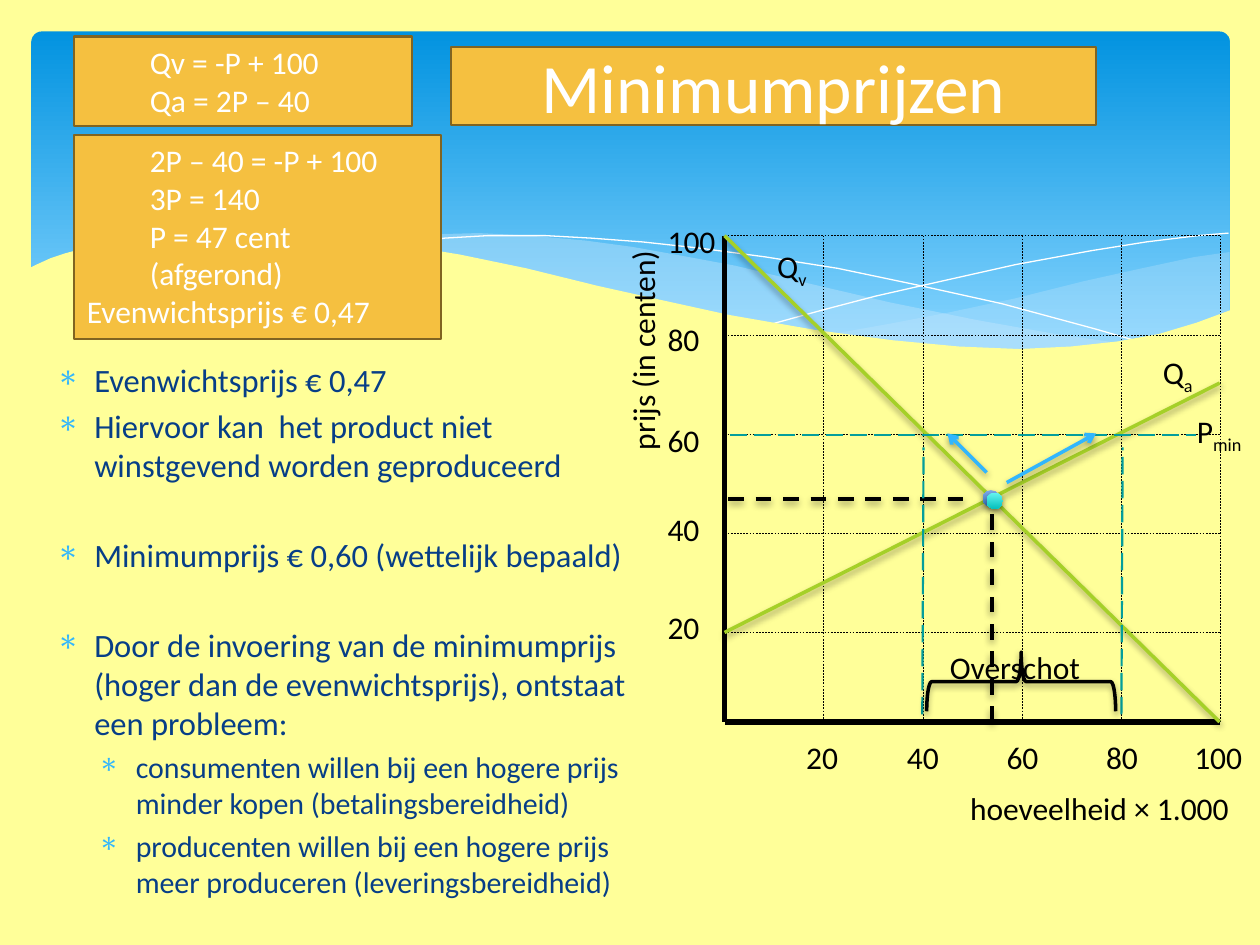
import pptx
import pptx.util
import pptx.dml.color
import pptx.enum.dml
import pptx.enum.shapes
import pptx.enum.text
import pptx.oxml.ns
from lxml import etree

Inches, Pt = pptx.util.Inches, pptx.util.Pt
SHAPE = pptx.enum.shapes.MSO_SHAPE
DASH = pptx.enum.dml.MSO_LINE
ANCHOR = pptx.enum.text.MSO_ANCHOR
ALIGN = pptx.enum.text.PP_ALIGN
GROW = pptx.enum.text.MSO_AUTO_SIZE.SHAPE_TO_FIT_TEXT

HEX = {
    "paper": "FFFF99", "sky": "0293E0", "haze": "83D3FE", "mist": "C6E7FC",
    "gold": "F5C040", "brown": "806421", "navy": "073E87", "blue": "31B6FD",
    "green": "A5D028", "teal": "049E9B", "black": "000000", "white": "FFFFFF",
    "steel": "80ACEA", "ocean": "3570BA", "aqua": "65F5F1", "lagoon": "04C0BB",
}

LEFT, RIGHT, TOP, BASE = 5.75, 9.68, 1.87, 5.73
STEP = 0.787
TICKS = (20, 40, 60, 80, 100)

# Background waves: fill, alpha in percent, closed, points
WAVES = [
    ("mist", 29, True, [
        (9.76, 2), (9.48, 2.04), (9.06, 2.13), (8.61, 2.23), (8.05, 2.37), (7.53, 2.48),
        (7.06, 2.57), (6.61, 2.65), (6.91, 2.69), (7.32, 2.74), (7.69, 2.77), (8.03, 2.78),
        (8.44, 2.77), (8.81, 2.73), (9.13, 2.67), (9.42, 2.59), (9.63, 2.52), (9.76, 2.47)]),
    ("mist", 40, True, [
        (8.93, 2.73), (8.37, 2.65), (7.75, 2.54), (7.06, 2.4), (6.29, 2.22), (5.84, 2.11),
        (5.41, 2.03), (5.02, 1.96), (4.65, 1.91), (4.2, 1.87), (3.8, 1.85), (3.44, 1.86),
        (3.13, 1.88), (2.86, 1.91), (3.23, 1.96), (3.62, 2.03), (4.04, 2.11), (4.49, 2.22),
        (5.3, 2.4), (5.84, 2.52), (6.34, 2.61), (6.8, 2.68), (7.22, 2.74), (7.61, 2.77),
        (7.96, 2.78), (8.38, 2.78), (8.67, 2.76)]),
    (None, 100, False, [
        (3.09, 1.95), (3.28, 1.92), (3.53, 1.89), (3.87, 1.87), (4.33, 1.87), (4.69, 1.89),
        (5.1, 1.92), (5.56, 1.97), (6.08, 2.04), (6.65, 2.13), (7.27, 2.26), (7.95, 2.41),
        (8.69, 2.61), (9.07, 2.72)]),
    (None, 100, False, [
        (6.13, 2.57), (6.53, 2.46), (6.95, 2.35), (7.48, 2.23), (8.06, 2.1), (8.66, 1.99),
        (9.1, 1.92), (9.51, 1.87), (9.75, 1.85)]),
    ("paper", 100, True, [
        (9.77, 2.46), (9.5, 2.56), (9.2, 2.65), (8.87, 2.71), (8.5, 2.75), (8.09, 2.77),
        (7.61, 2.75), (7.08, 2.7), (6.48, 2.62), (5.79, 2.5), (5.29, 2.39), (4.75, 2.27),
        (4.18, 2.13), (3.65, 2.02), (3.16, 1.94), (2.71, 1.88), (2.3, 1.85), (1.93, 1.84),
        (1.61, 1.84), (1.32, 1.86), (1.06, 1.89), (0.85, 1.93), (0.67, 1.97), (0.52, 2.01),
        (0.4, 2.05), (0.29, 2.1), (0.23, 2.13), (0.23, 3.29), (9.77, 3.29)]),
]

# Explanation: level, points before, text
NOTES = [
    (0, 4, "Evenwichtsprijs € 0,47"),
    (0, 4, "Hiervoor kan  het product niet winstgevend worden geproduceerd"),
    (0, 29, "Minimumprijs € 0,60 (wettelijk bepaald)"),
    (0, 29, "Door de invoering van de minimumprijs (hoger dan de evenwichtsprijs), "
            "ontstaat een probleem:"),
    (1, 4, "consumenten willen bij een hogere prijs minder kopen (betalingsbereidheid)"),
    (1, 4, "producenten willen bij een hogere prijs meer produceren (leveringsbereidheid)"),
]


def rgb(name):
    return pptx.dml.color.RGBColor.from_string(HEX[name])


def put(item, **vals):
    for key, val in vals.items():
        setattr(item, key, val)


def add(parent, tag, **vals):
    node = etree.SubElement(parent, pptx.oxml.ns.qn("a:" + tag))
    for key, val in vals.items():
        node.set(key, str(val))
    return node


def shade(item, on):
    """Give an item a soft drop shadow, or none at all."""
    effects = add(item._element.spPr, "effectLst")
    if on:
        drop = add(effects, "outerShdw", blurRad=Pt(4), dist=Pt(2), dir=5400000, rotWithShape=0)
        add(add(drop, "srgbClr", val=HEX["black"]), "alpha", val=38000)


def paint(fill, *names, end=1):
    """Fill with one colour, or with two from top to bottom."""
    if len(names) == 1:
        fill.solid()
        fill.fore_color.rgb = rgb(names[0])
        return
    fill.gradient()
    fill.gradient_angle = 270
    for stop, name, place in zip(fill.gradient_stops, names, (0, end)):
        stop.color.rgb = rgb(name)
        stop.position = place


def stroke(line, name, width, dash=None):
    paint(line.fill, name)
    put(line, width=Pt(width), dash_style=dash)


def draw(slide, start, end, name, width, dash=None, shadow=False, arrow=False):
    kind = pptx.enum.shapes.MSO_CONNECTOR.STRAIGHT
    line = slide.shapes.add_connector(kind, *map(Inches, start + end))
    stroke(line.line, name, width, dash)
    if arrow:
        add(line.line._get_or_add_ln(), "tailEnd", type="arrow")
    shade(line, shadow)


def block(slide, kind, box, *fills, end=1, edge=None, shadow=False):
    shape = slide.shapes.add_shape(kind, *map(Inches, box))
    if fills:
        paint(shape.fill, *fills, end=end)
    else:
        shape.fill.background()
    if edge:
        stroke(shape.line, *edge)
    else:
        shape.line.fill.background()
    shade(shape, shadow)
    return shape


def wave(slide, name, alpha, closed, points):
    spots = [(Inches(x), Inches(y)) for x, y in points]
    form = slide.shapes.build_freeform(*spots[0])
    form.add_line_segments(spots[1:], close=closed)
    shape = form.convert_to_shape()
    if name:
        paint(shape.fill, name)
        shape.line.fill.background()
        if alpha < 100:
            tint = shape._element.spPr.find(".//" + pptx.oxml.ns.qn("a:srgbClr"))
            add(tint, "alpha", val=alpha * 1000)
    else:
        shape.fill.background()
        stroke(shape.line, "white", 0)
    shade(shape, False)


def write(para, text, size=18, name="black"):
    run = para.add_run()
    run.text = text
    put(run.font, size=Pt(size), name="Calibri")
    run.font.color.rgb = rgb(name)
    return run


def label(slide, box, text, sub="", turn=0, wrap=False):
    shape = slide.shapes.add_textbox(*map(Inches, box))
    shape.rotation = turn
    put(shape.text_frame, word_wrap=wrap, auto_size=GROW)
    para = shape.text_frame.paragraphs[0]
    write(para, text)
    if sub:
        write(para, sub).font._element.set("baseline", "-25000")


def panel(slide, box, lines, size=18, align=ALIGN.LEFT, anchor=ANCHOR.TOP):
    """Gold box; lines are pairs of left indent and text."""
    shape = block(slide, SHAPE.RECTANGLE, box, "gold", edge=("brown", 1.25))
    frame = shape.text_frame
    put(frame, word_wrap=True, vertical_anchor=anchor)
    for i, (inset, text) in enumerate(lines):
        para = frame.add_paragraph() if i else frame.paragraphs[0]
        para.alignment = align
        para._p.get_or_add_pPr().set("marL", str(Inches(inset)))
        write(para, text, size, "white")


def notes(slide):
    frame = slide.shapes.add_textbox(*map(Inches, (0.35, 2.81, 4.8, 4.33))).text_frame
    frame.word_wrap = True
    for i, (level, gap, text) in enumerate(NOTES):
        para = frame.add_paragraph() if i else frame.paragraphs[0]
        put(para, level=level, space_before=Pt(gap))
        props = para._p.get_or_add_pPr()
        props.set("marL", str(Inches((0.3, 0.63)[level])))
        props.set("indent", str(Inches(-0.3)))
        add(add(props, "buClr"), "srgbClr", val=HEX["blue"])
        add(props, "buChar", char="∗")
        write(para, text, (18.6, 17.1)[level], "navy")


def axes(slide):
    draw(slide, (LEFT, TOP), (LEFT, BASE), "black", 3)
    draw(slide, (RIGHT, BASE), (LEFT, BASE), "black", 3)
    for i in range(5):
        x, y = LEFT + (i + 1) * STEP, TOP + i * STEP
        draw(slide, (LEFT, y), (RIGHT, y), "black", 0.25, DASH.DASH)
        draw(slide, (x, TOP), (x, BASE), "black", 0.25, DASH.DASH)
    label(slide, (7.6, 6.21, 2.28, 0.4), "hoeveelheid × 1.000")
    label(slide, (4.2, 2.57, 1.8, 0.4), "prijs (in centen)", turn=270)
    tops = (4.78, 4, 3.29, 2.49, 1.71)
    lefts = (6.3, 7.1, 7.89, 8.68, 9.38)
    for tick, x, y in zip(TICKS, lefts, tops):
        wide = 0.59 if tick == 100 else 0.46
        label(slide, (5.2, y, wide, 0.4), str(tick))
        label(slide, (x, 5.81, wide, 0.4), str(tick))


def curves(slide):
    draw(slide, (LEFT, TOP), (RIGHT, BASE), "green", 2, shadow=True)
    label(slide, (6.07, 1.91, 0.45, 0.4), "Q", "v")
    draw(slide, (LEFT, 5.02), (RIGHT, 3.04), "green", 2, shadow=True)
    label(slide, (9.13, 2.75, 0.45, 0.4), "Q", "a")
    draw(slide, (5.78, 3.96), (7.72, 3.96), "black", 2.25, DASH.DASH, True)
    block(slide, SHAPE.OVAL, (7.8, 3.89, 0.13, 0.13), "steel", "ocean", shadow=True)
    draw(slide, (5.79, 3.45), (9.49, 3.45), "teal", 1.25, DASH.LONG_DASH)
    label(slide, (9.4, 3.22, 0.59, 0.4), "P", "min")
    draw(slide, (7.87, BASE), (7.87, 4.07), "black", 2.25, DASH.DASH, True)
    block(slide, SHAPE.OVAL, (7.83, 3.91, 0.13, 0.13), "aqua", "lagoon", shadow=True)
    for x in (7.32, 8.9):
        draw(slide, (x, 5.67), (x + 0.01, 3.55), "teal", 1.25, DASH.LONG_DASH)


def main():
    deck = pptx.Presentation()
    put(deck, slide_width=Inches(10), slide_height=Inches(7.5))
    slide = deck.slides.add_slide(deck.slide_layouts[6])
    paint(slide.background.fill, "paper")
    sky = block(slide, SHAPE.ROUNDED_RECTANGLE, (0.25, 0.25, 9.51, 2.7), "sky", "haze", end=0.9)
    sky.adjustments[0] = 0.03
    for item in WAVES:
        wave(slide, *item)
    axes(slide)
    curves(slide)
    panel(slide, (0.59, 0.29, 2.68, 0.71), [(0.5, "Qv = -P + 100"), (0.5, "Qa = 2P – 40")])
    notes(slide)
    panel(slide, (3.58, 0.37, 5.12, 0.62), [(0, "Minimumprijzen")], 39.6,
          ALIGN.CENTER, ANCHOR.MIDDLE)
    panel(slide, (0.59, 1.07, 2.91, 1.62), [
        (0.5, "2P – 40 = -P + 100"), (0.5, "3P = 140"),
        (0.5, "P = 47 cent (afgerond)"), (0, "Evenwichtsprijs € 0,47")])
    draw(slide, (7.83, 3.75), (7.52, 3.44), "blue", 2, shadow=True, arrow=True)
    draw(slide, (7.99, 3.83), (8.7, 3.44), "blue", 2, shadow=True, arrow=True)
    brace = block(slide, SHAPE.RIGHT_BRACE, (7.87, 4.66, 0.47, 1.5),
                  edge=("black", 2), shadow=True)
    brace.rotation = 270
    label(slide, (7.44, 5.09, 1.5, 0.4), "Overschot", wrap=True)
    deck.save("out.pptx")


if __name__ == "__main__":
    main()
